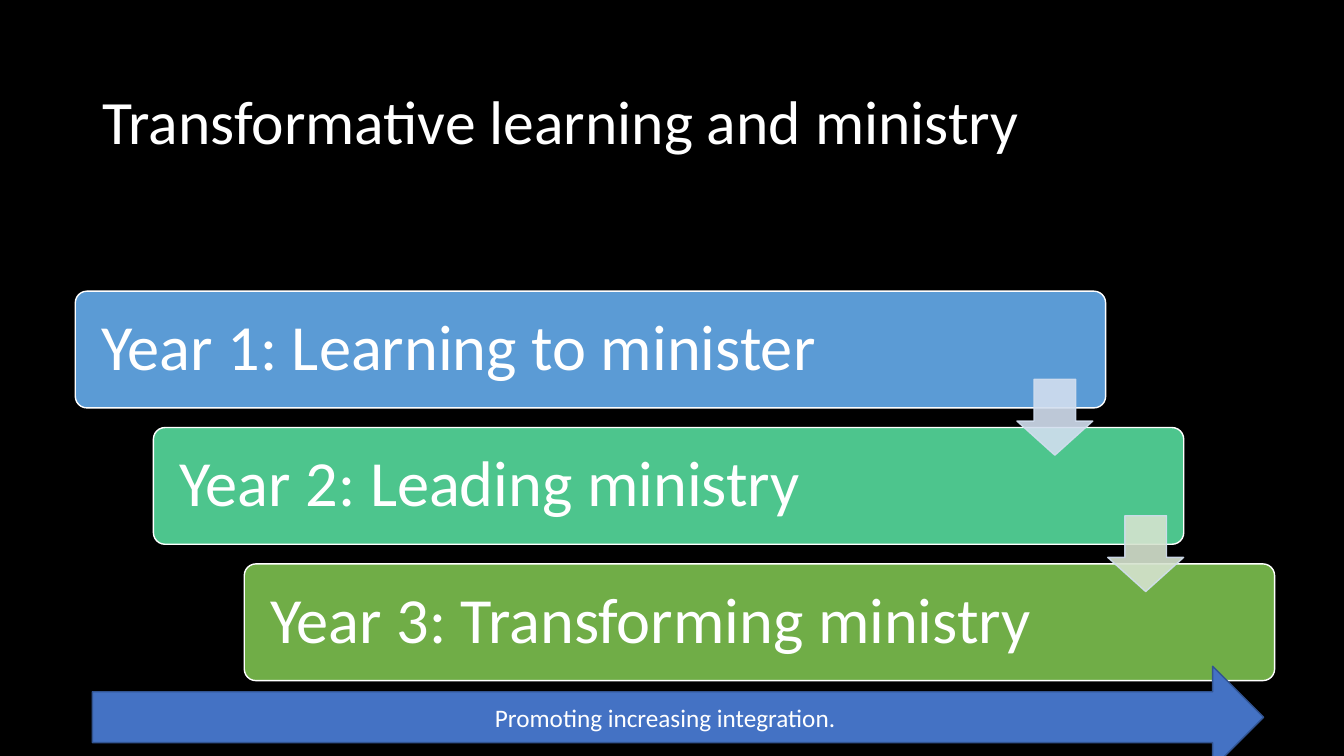
from dataclasses import dataclass

from lxml.etree import SubElement
from pptx import Presentation
from pptx.dml.color import RGBColor
from pptx.enum.shapes import MSO_SHAPE as Shape
from pptx.enum.text import MSO_ANCHOR as Anchor, PP_ALIGN as Align
from pptx.oxml.ns import qn
from pptx.util import Pt


@dataclass(frozen=True)
class Theme:
    """Colours, font and type sizes of the slide."""
    font: str = "Calibri"
    background: str = "000000"
    text: str = "FFFFFF"
    years: tuple = ("5B9BD5", "4DC58D", "70AD47")
    steps: tuple = ("D2DEEF", "D5E3CF")
    step_line: str = "D2DEEF"
    banner: str = "4472C4"
    banner_line: str = "325491"
    title_size: int = 44
    year_size: int = 46
    banner_size: int = 18
    step_opacity: int = 90


class StaircaseSlide:
    """Draws the elements of a staircase slide in one theme."""

    def __init__(self, deck, theme):
        """Add a blank page with the theme's background."""
        self.theme = theme
        self.page = deck.slides.add_slide(deck.slide_layouts[6])
        self.paint(self.page.background.fill, theme.background)

    def paint(self, fill, color, opacity=100):
        """Make a fill solid."""
        fill.solid()
        fill.fore_color.rgb = RGBColor.from_string(color)

    def fade(self, box, opacity):
        """Set the opacity, in percent, of a shape's fill and line."""
        for color in box.element.spPr.iter(qn("a:srgbClr")):
            SubElement(color, qn("a:alpha"), val=str(opacity * 1000))

    def label(self, box, text, size, align=Align.LEFT, spacing=1.0, inset=7.2):
        """Put one styled, vertically centred paragraph in a box."""
        frame = box.text_frame
        frame.text = text
        frame.word_wrap = True
        frame.vertical_anchor = Anchor.MIDDLE
        frame.margin_left = frame.margin_right = Pt(inset)
        para = frame.paragraphs[0]
        para.alignment = align
        para.line_spacing = spacing
        font = para.runs[0].font
        font.name = self.theme.font
        font.size = Pt(size)
        font.color.rgb = RGBColor.from_string(self.theme.text)

    def shape(self, kind, area, color, line, adjustments=()):
        """Add a filled and outlined preset shape."""
        box = self.page.shapes.add_shape(kind, *map(Pt, area))
        box.shadow.inherit = False
        for index, value in enumerate(adjustments):
            box.adjustments[index] = value
        box.line.width = Pt(1)
        self.paint(box.line.fill, line)
        self.paint(box.fill, color)
        return box

    def title(self, text, area):
        """Add the slide title."""
        box = self.page.shapes.add_textbox(*map(Pt, area))
        self.label(box, text, self.theme.title_size, spacing=0.9)

    def year(self, text, area, color):
        """Add one stair with its label."""
        box = self.shape(Shape.ROUNDED_RECTANGLE, area, color, self.theme.text, (0.1,))
        self.label(box, text, self.theme.year_size, spacing=0.9, inset=16)

    def step(self, area, color):
        """Add a translucent arrow leading down to the next stair."""
        box = self.shape(Shape.DOWN_ARROW, area, color, self.theme.step_line, (0.55, 0.45))
        self.fade(box, self.theme.step_opacity)

    def banner(self, text, area):
        """Add the wide arrow along the bottom."""
        box = self.shape(Shape.RIGHT_ARROW, area, self.theme.banner, self.theme.banner_line)
        self.label(box, text, self.theme.banner_size, Align.CENTER)


def main():
    """Build and save the slide."""
    theme = Theme()
    deck = Presentation()
    deck.slide_width, deck.slide_height = Pt(960), Pt(540)
    slide = StaircaseSlide(deck, theme)
    slide.title("Transformative learning and ministry", (66, 44.8, 828, 88.4))

    labels = ("Year 1: Learning to minister", "Year 2: Leading ministry",
              "Year 3: Transforming ministry")
    lefts = (53.8, 109.6, 174.5)
    top, pitch, width, height = 208, 97.4, 736, 83.4
    for row, (label, left, color) in enumerate(zip(labels, lefts, theme.years)):
        slide.year(label, (left, top + row * pitch, width, height), color)
    for row, (left, color) in enumerate(zip(lefts[1:], theme.steps)):
        slide.step((left + 616.8, top + 63 + row * pitch, 54.2, 54.2), color)

    slide.banner("Promoting increasing integration.", (66, 475.9, 836.6, 72.8))
    deck.save("out.pptx")


if __name__ == "__main__":
    main()
